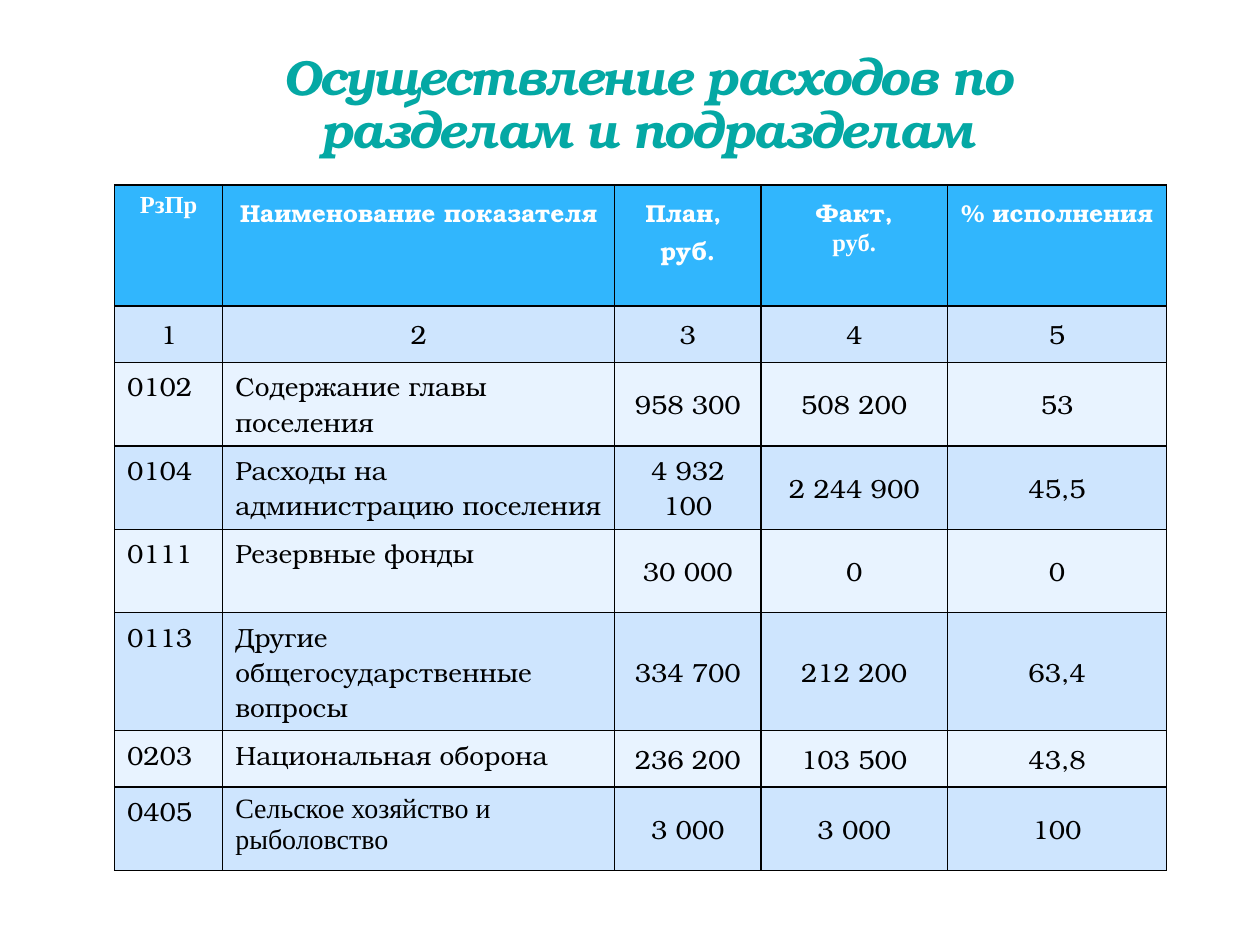
from lxml import etree
from pptx import Presentation
from pptx.dml.color import RGBColor
from pptx.enum.text import MSO_ANCHOR, PP_ALIGN
from pptx.oxml import parse_xml
from pptx.oxml.ns import nsdecls, qn
from pptx.util import Cm, Pt

CENTER, LEFT = PP_ALIGN.CENTER, PP_ALIGN.LEFT
TOP, MIDDLE, BOTTOM = MSO_ANCHOR.TOP, MSO_ANCHOR.MIDDLE, MSO_ANCHOR.BOTTOM
SERIF, TIMES = "TeX Gyre Bonum", "Times New Roman"
HEADER_FILL, BAND_FILLS = "31B6FD", ("CEE5FE", "E8F3FF")


def add_span(para, text, font, size, color, bold=False):
    span = para.add_run()
    span.text = text
    span.font.name = font
    span.font.size = Pt(size)
    span.font.bold = bold
    span.font.color.rgb = RGBColor.from_string(color)
    return span


def style_cell(cell, fill, anchor):
    """Fill the cell, anchor its text and draw thin black borders."""
    cell.vertical_anchor = anchor
    properties = cell._tc.get_or_add_tcPr()
    for side in ("lnL", "lnR", "lnT", "lnB"):
        properties.append(parse_xml(
            f'<a:{side} {nsdecls("a")} w="12700"><a:solidFill>'
            f'<a:srgbClr val="000000"/></a:solidFill></a:{side}>'))
    cell.fill.solid()
    cell.fill.fore_color.rgb = RGBColor.from_string(fill)


deck = Presentation()
deck.slide_width, deck.slide_height = Cm(25.4), Cm(19.05)
page = deck.slides.add_slide(deck.slide_layouts[6])

# Title
box = page.shapes.add_textbox(Cm(3.3), Cm(1.93), Cm(19.5), Cm(1.27))
frame = box.text_frame
frame.word_wrap = True
frame.vertical_anchor = BOTTOM
frame.margin_bottom = 0
para = frame.paragraphs[0]
para.alignment = CENTER
para.line_spacing = 0.9
span = add_span(para, "Осуществление расходов по разделам и подразделам",
                SERIF, 28, "04A8A4", True)
span.font.italic = True
title_properties = span.font._element
title_properties.set("spc", "-100")
outline = etree.Element(qn("a:ln"), w="3175")
outline_fill = etree.SubElement(outline, qn("a:solidFill"))
outline_color = etree.SubElement(outline_fill, qn("a:srgbClr"), val="AFCCDE")
etree.SubElement(outline_color, qn("a:alpha"), val="25000")
title_properties.insert(0, outline)

# Expenditure table
headers = [
    [("РзПр", TIMES)],
    [("Наименование показателя", SERIF)],
    [("План, ", SERIF), ("руб.", SERIF)],
    [("Факт,", SERIF), ("руб.", TIMES)],
    [("% исполнения", SERIF)],
]
rows = [
    ("1", "2", "3", "4", "5"),
    ("0102", "Содержание главы поселения", "958 300", "508 200", "53"),
    ("0104", "Расходы на администрацию поселения", "4 932 100", "2 244 900", "45,5"),
    ("0111", "Резервные фонды", "30 000", "0", "0"),
    ("0113", "Другие общегосударственные вопросы", "334 700", "212 200", "63,4"),
    ("0203", "Национальная оборона", "236 200", "103 500", "43,8"),
    ("0405", "Сельское хозяйство и рыболовство", "3 000", "3 000", "100"),
]
column_widths = [2.18, 7.9, 2.95, 3.76, 4.42]
row_heights = [2.44, 1.14, 1.68, 1.68, 1.68, 2.38, 1.14, 1.68]

table = page.shapes.add_table(
    len(row_heights), len(column_widths), Cm(2.31), Cm(3.73),
    Cm(sum(column_widths)), Cm(sum(row_heights))).table
for column, width in zip(table.columns, column_widths):
    column.width = Cm(width)
for row, height in zip(table.rows, row_heights):
    row.height = Cm(height)

for column_index, lines in enumerate(headers):
    cell = table.cell(0, column_index)
    style_cell(cell, HEADER_FILL, TOP)
    for line_index, (text, font) in enumerate(lines):
        frame = cell.text_frame
        para = frame.add_paragraph() if line_index else frame.paragraphs[0]
        para.alignment = CENTER
        para.line_spacing = 1.07 if font == SERIF else 1.0
        add_span(para, text, font, 14, "FFFFFF", True)

for row_index, values in enumerate(rows):
    for column_index, text in enumerate(values):
        cell = table.cell(row_index + 1, column_index)
        is_label = row_index > 0 and column_index < 2
        style_cell(cell, BAND_FILLS[row_index % 2], TOP if is_label else MIDDLE)
        para = cell.text_frame.paragraphs[0]
        para.alignment = LEFT if is_label else CENTER
        is_last_name = row_index == len(rows) - 1 and column_index == 1
        font, size = (TIMES, 16) if is_last_name else (SERIF, 15)
        add_span(para, text, font, size, "000000")

deck.save("out.pptx")
